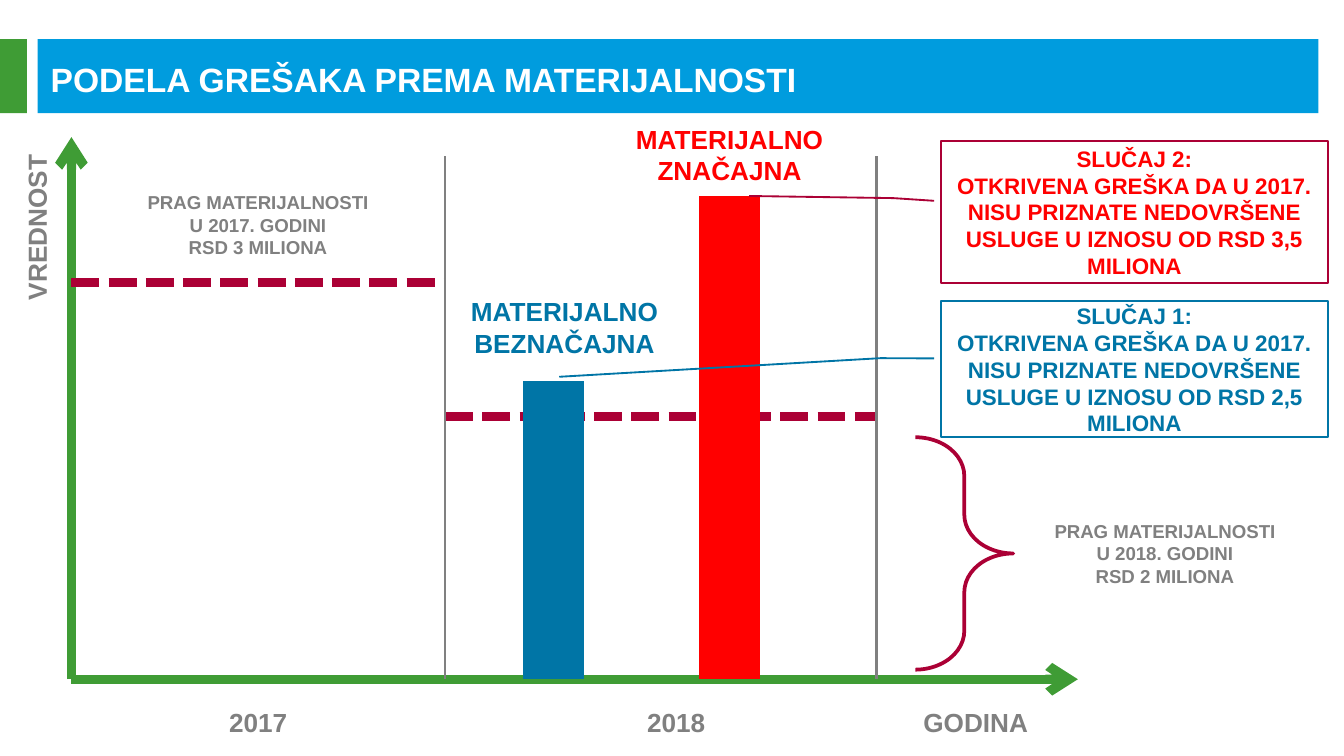
from lxml import etree
from pptx import Presentation
from pptx.dml.color import RGBColor
from pptx.enum.dml import MSO_LINE
from pptx.enum.shapes import MSO_CONNECTOR, MSO_SHAPE
from pptx.enum.text import MSO_ANCHOR, PP_ALIGN
from pptx.oxml.ns import qn
from pptx.util import Cm, Pt

STRAIGHT = MSO_CONNECTOR.STRAIGHT
RECTANGLE = MSO_SHAPE.RECTANGLE
CALLOUT = MSO_SHAPE.LINE_CALLOUT_2
BRACE = MSO_SHAPE.RIGHT_BRACE
DASH = MSO_LINE.SQUARE_DOT
MIDDLE = MSO_ANCHOR.MIDDLE
LEFT, CENTER = PP_ALIGN.LEFT, PP_ALIGN.CENTER

COLORS = {
    name: RGBColor.from_string(value)
    for name, value in {
        "sky": "009CDE", "green": "3F9C35", "crimson": "AB0035", "gray": "808080",
        "blue": "0075A6", "red": "FF0000", "white": "FFFFFF",
    }.items()
}
FONT = {"name": "Arial", "bold": True}
FRAME = {"word_wrap": True, "vertical_anchor": MIDDLE}


def write(shape, lines, size, color, align=CENTER):
    frame = shape.text_frame
    for key, value in FRAME.items():
        setattr(frame, key, value)
    frame.text = "\n".join(lines)
    for paragraph in frame.paragraphs:
        paragraph.alignment = align
        for key, value in {**FONT, "size": Pt(size)}.items():
            setattr(paragraph.font, key, value)
        paragraph.font.color.rgb = COLORS[color]


def draw_line(start, end, color, width, dash=None, arrow=False):
    connector = slide.shapes.add_connector(STRAIGHT, *map(Cm, start + end))
    connector.line.color.rgb = COLORS[color]
    connector.line.width = Pt(width)
    if dash:
        connector.line.dash_style = dash
    if arrow:
        etree.SubElement(connector.line._get_or_add_ln(), qn("a:tailEnd"), type="arrow")
    etree.SubElement(connector._element.spPr, qn("a:effectLst"))


prs = Presentation()
prs.slide_width, prs.slide_height = Cm(25.4), Cm(14.28)
slide = prs.slides.add_slide(prs.slide_layouts[6])

for left, width, color in [(0.71, 24.21, "sky"), (0, 0.51, "green")]:
    band = slide.shapes.add_shape(RECTANGLE, Cm(left), Cm(0.74), Cm(width), Cm(1.4))
    band.shadow.inherit = False
    band.fill.solid()
    band.fill.fore_color.rgb = COLORS[color]
    band.line.fill.background()

title = slide.shapes.add_textbox(Cm(0.71), Cm(0.76), Cm(24.51), Cm(1.47))
write(title, ["PODELA GREŠAKA PREMA MATERIJALNOSTI"], 18, "white", LEFT)

axis_x, axis_y = 1.35, 12.83
year_2017_end, year_2018_end = 8.41, 16.56

for tip in [(20.37, axis_y), (axis_x, 2.59)]:
    draw_line((axis_x, axis_y), tip, "green", 5, arrow=True)
for start, end, threshold in [
    (axis_x, year_2017_end, 5.33),
    (year_2017_end, year_2018_end, 7.87),
]:
    draw_line((start, threshold), (end, threshold), "crimson", 5, dash=DASH)
for year_end in (year_2017_end, year_2018_end):
    draw_line((year_end, 2.95), (year_end, axis_y), "gray", 1.5)
for x, top, color in [(10.46, 7.19, "blue"), (13.79, 3.71, "red")]:
    draw_line((x, axis_y), (x, top), color, 33)

cases = [
    (2.67, 2.67, "crimson", "red", "2", "3,5", (0.421, -0.017, 0.402, -0.123, 0.387, -0.495)),
    (5.69, 2.57, "blue", "blue", "1", "2,5", (0.421, -0.017, 0.419, -0.155, 0.556, -0.985)),
]
for top, height, border, color, number, amount, leader in cases:
    case = slide.shapes.add_shape(CALLOUT, Cm(17.78), Cm(top), Cm(7.32), Cm(height))
    case.shadow.inherit = False
    case.fill.background()
    case.line.color.rgb = COLORS[border]
    case.line.width = Pt(1)
    for index, value in enumerate(leader):
        case.adjustments[index] = value
    write(case, [
        f"SLUČAJ {number}:",
        "OTKRIVENA GREŠKA DA U 2017. NISU PRIZNATE NEDOVRŠENE "
        f"USLUGE U IZNOSU OD RSD {amount} MILIONA",
    ], 12, color)

brace = slide.shapes.add_shape(BRACE, Cm(17.3), Cm(8.26), Cm(1.85), Cm(4.39))
brace.shadow.inherit = False
brace.fill.background()
brace.line.color.rgb = COLORS["crimson"]
brace.line.width = Pt(2)
brace.adjustments[0] = 0.396

labels = [
    (3.33, 13.28, 3.1, 0.71, 0, 14, "gray", ["2017"]),
    (11.23, 13.28, 3.1, 0.71, 0, 14, "gray", ["2018"]),
    (16.89, 13.28, 3.1, 0.71, 0, 14, "gray", ["GODINA"]),
    (-1.14, 3.94, 3.66, 0.71, 270, 14, "gray", ["VREDNOST"]),
    (1.85, 3.89, 6.05, 0.71, 0, 10, "gray",
     ["PRAG MATERIJALNOSTI", "U 2017. GODINI", "RSD 3 MILIONA"]),
    (19.41, 9.86, 5.21, 1.19, 0, 10, "gray",
     ["PRAG MATERIJALNOSTI", "U 2018. GODINI", "RSD 2 MILIONA"]),
    (11.2, 2.57, 5.18, 0.71, 0, 14, "red", ["MATERIJALNO ZNAČAJNA"]),
    (8.08, 5.82, 5.18, 0.71, 0, 14, "blue", ["MATERIJALNO BEZNAČAJNA"]),
]
for left, top, width, height, rotation, size, color, lines in labels:
    label = slide.shapes.add_textbox(Cm(left), Cm(top), Cm(width), Cm(height))
    label.rotation = rotation
    write(label, lines, size, color)

prs.save("out.pptx")
